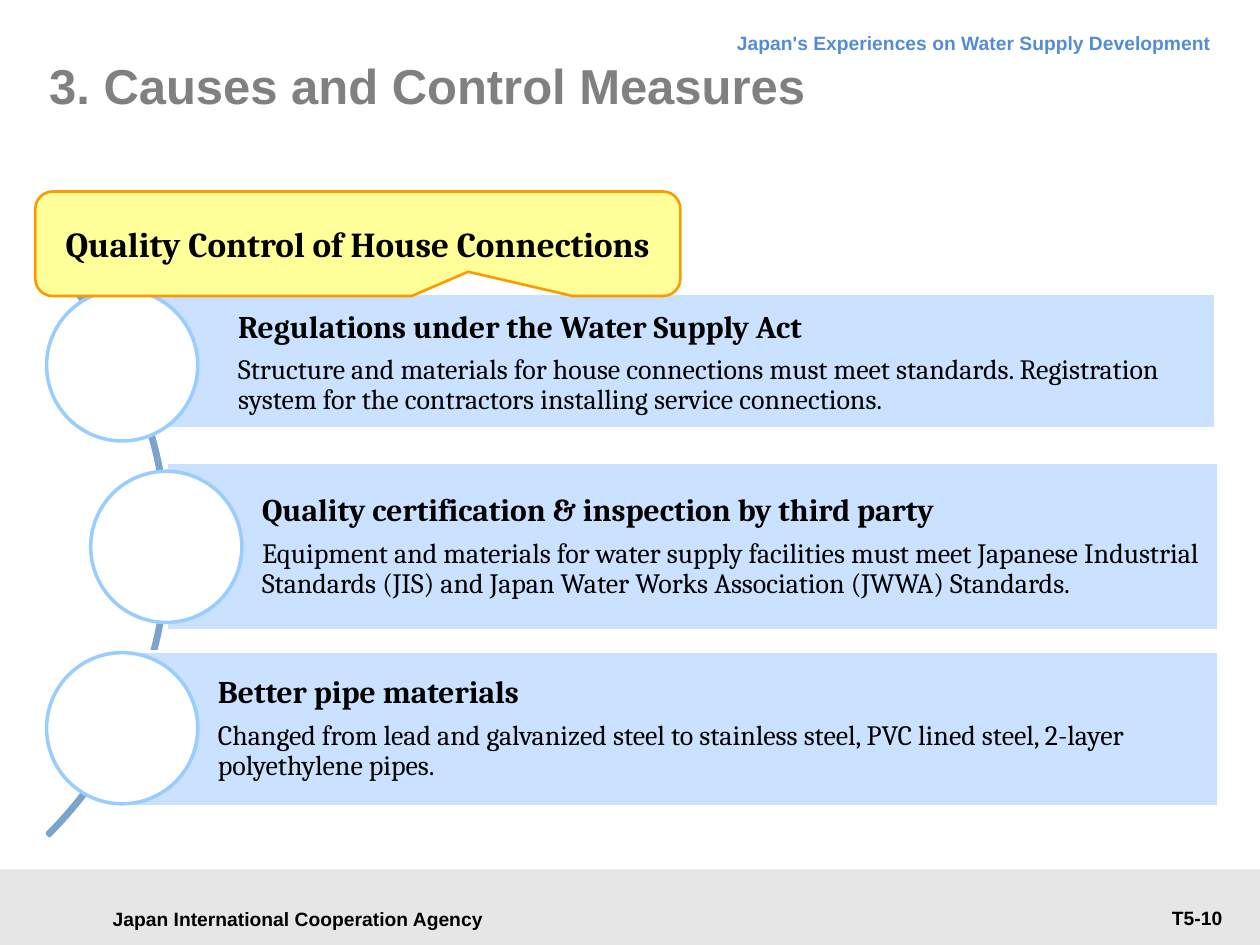
from lxml import etree
from pptx import Presentation
from pptx.dml.color import RGBColor
from pptx.enum.shapes import MSO_SHAPE
from pptx.enum.text import MSO_ANCHOR, MSO_AUTO_SIZE, PP_ALIGN
from pptx.oxml.ns import qn
from pptx.util import Inches, Pt

RECT, OVAL, ARC = MSO_SHAPE.RECTANGLE, MSO_SHAPE.OVAL, MSO_SHAPE.BLOCK_ARC
CALLOUT = MSO_SHAPE.ROUNDED_RECTANGULAR_CALLOUT
TOP, MIDDLE = MSO_ANCHOR.TOP, MSO_ANCHOR.MIDDLE
LEFT, CENTER, RIGHT = PP_ALIGN.LEFT, PP_ALIGN.CENTER, PP_ALIGN.RIGHT

THEME = {
    "footer": "E6E6E6", "arc": "7BA3CC", "band": "CAE2FF", "white": "FFFFFF",
    "ring": "99CCFF", "note": "FFFF99", "note_line": "FF9900",
    "title": dict(name="Arial", size=28, bold=True, color="808080"),
    "label": dict(name="Arial", size=11, bold=True, color="000000"),
    "header": dict(name="Arial", size=11, bold=True, color="548DD4"),
    "callout": dict(name="Cambria", size=20, bold=True, color="000000"),
    "heading": dict(name="Cambria", size=18, bold=True, color="000000"),
    "body": dict(name="Cambria", size=16, bold=False, color="000000"),
}
COLS, ROWS = 100, 75

prs = Presentation()
prs.slide_width, prs.slide_height = Inches(10), Inches(7.5)
CW, RH = prs.slide_width / COLS, prs.slide_height / ROWS
slide = prs.slides.add_slide(prs.slide_layouts[5])


def add_shape(kind, x, y, w, h, fill=None, line=None, width=2):
    s = slide.shapes.add_shape(kind, int(x * CW), int(y * RH), int(w * CW), int(h * RH))
    s.shadow.inherit = False
    if fill:
        s.fill.solid()
        s.fill.fore_color.rgb = RGBColor.from_string(fill)
    else:
        s.fill.background()
    if line:
        s.line.color.rgb = RGBColor.from_string(line)
        s.line.width = Pt(width)
    else:
        s.line.fill.background()
    return s


def write(s, lines, align=LEFT, anchor=MIDDLE, insets=(1, 0.5, 1, 0.5)):
    tf = s.text_frame
    tf.word_wrap, tf.auto_size, tf.vertical_anchor = True, MSO_AUTO_SIZE.NONE, anchor
    for side, inset in zip(("left", "top", "right", "bottom"), insets):
        setattr(tf, f"margin_{side}", int(inset * CW))
    for i, (text, style, spacing) in enumerate(lines):
        p = tf.paragraphs[0] if i == 0 else tf.add_paragraph()
        p.alignment = align
        for key, value in spacing.items():
            setattr(p, key, value)
        r = p.add_run()
        r.text = text
        font = THEME[style]
        r.font.name, r.font.size, r.font.bold = font["name"], Pt(font["size"]), font["bold"]
        r.font.color.rgb = RGBColor.from_string(font["color"])


add_shape(RECT, 0, 69, 100, 6, THEME["footer"])
labels = [
    ((7.1, 71.2, 33.1, 3.4), "Japan International Cooperation Agency", "label", CENTER, MIDDLE, {}),
    ((27.2, 1.3, 69.9, 3.8), "Japan's Experiences on Water Supply Development", "header", RIGHT, TOP,
     {"line_spacing": Pt(18)}),
    ((82.3, 71.4, 15.7, 2.9), "T5-10", "label", RIGHT, TOP, {}),
]
for (x, y, w, h), text, style, align, anchor, spacing in labels:
    s = slide.shapes.add_textbox(int(x * CW), int(y * RH), int(w * CW), int(h * RH))
    write(s, [(text, style, spacing)], align, anchor)

arc = add_shape(ARC, -51.3, 11.1, 64.7, 64.7, line=THEME["arc"])
for i, value in enumerate((189, 27, 0.004)):
    arc.adjustments[i] = value
ln = arc.line._get_or_add_ln()
ln.set("cap", "rnd")
etree.SubElement(ln, qn("a:round"))

DISC = 12
measures = [
    ((11.3, 23.3, 85.2, 10.7), (3.7, 23), 1, "Regulations under the Water Supply Act",
     "Structure and materials for house connections must meet standards. "
     "Registration system for the contractors installing service connections."),
    ((13.2, 36.7, 83.5, 13.4), (7.2, 37.4), 0.9, "Quality certification & inspection by third party",
     "Equipment and materials for water supply facilities must meet Japanese Industrial "
     "Standards (JIS) and Japan Water Works Association (JWWA) Standards."),
    ((9.7, 51.7, 87, 12.3), (3.7, 51.8), 0.9, "Better pipe materials",
     "Changed from lead and galvanized steel to stainless steel, PVC lined steel, "
     "2-layer polyethylene pipes."),
]
for box, disc, leading, heading, body in measures:
    band = add_shape(RECT, *box, THEME["band"], THEME["white"])
    write(band, [
        (heading, "heading", {"line_spacing": leading, "space_after": Pt(6)}),
        (body, "body", {"line_spacing": 0.9, "space_after": Pt(5.6)}),
    ], insets=(7.6, 0.5, 0.5, 0.5))
    add_shape(OVAL, *disc, DISC, DISC, THEME["white"], THEME["ring"])

title = slide.shapes.title
title.left, title.top = int(3.9 * CW), int(2.8 * RH)
title.width, title.height = int(89.8 * CW), int(7.9 * RH)
write(title, [("3. Causes and Control Measures", "title", {})], insets=(0, 0, 0, 0))

note = add_shape(CALLOUT, 2.8, 15.2, 51.2, 8.3, THEME["note"], THEME["note_line"], 1.5)
for i, value in enumerate((0.171, 0.268, 0.167)):
    note.adjustments[i] = value
write(note, [("Quality Control of House Connections", "callout", {})], insets=(2, 0.4, 1.2, 0.4))

prs.save("out.pptx")
